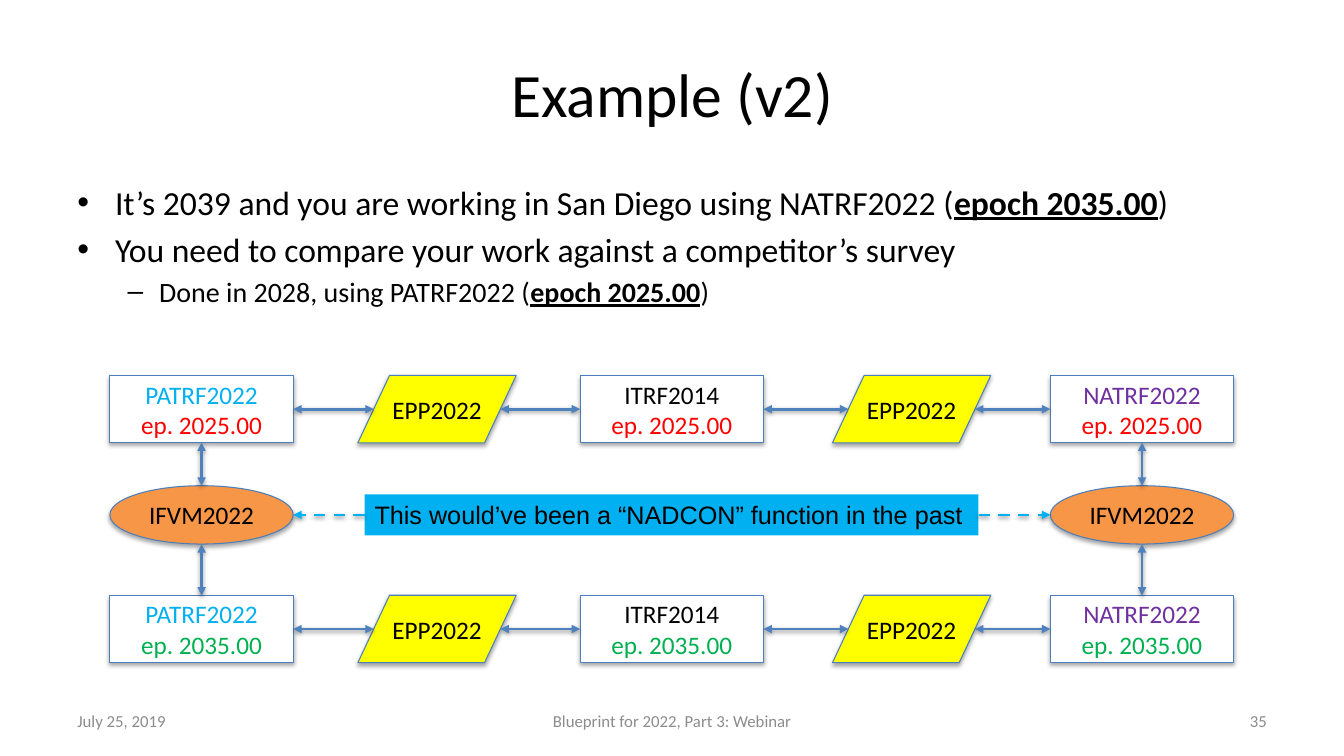
import pptx
import pptx.util
import pptx.dml.color
import pptx.enum.dml
import pptx.enum.shapes
import pptx.enum.text
import pptx.oxml.ns
from lxml import etree

Cm, Pt = pptx.util.Cm, pptx.util.Pt
KIND = pptx.enum.shapes.MSO_SHAPE
ALIGN = pptx.enum.text.PP_ALIGN
MID = pptx.enum.text.MSO_ANCHOR.MIDDLE
BLACK, SKY, STEEL = "000000", "00B0F0", "4F81BD"
FRAMES = [("PATRF2022", SKY), ("ITRF2014", BLACK), ("NATRF2022", "7030A0")]
EPOCHS = [("ep. 2025.00", "FF0000"), ("ep. 2035.00", "00B050")]


def color(code):
    return pptx.dml.color.RGBColor.from_string(code)


def node(root, tag, **attrs):
    return etree.SubElement(root, pptx.oxml.ns.qn("a:" + tag), attrs)


def write(para, text, size, code=BLACK, face="Calibri", strong=False):
    run = para.add_run()
    run.text = text
    font = run.font
    font.size, font.name = Pt(size), face
    font.color.rgb = color(code)
    if strong:
        font.bold = font.underline = True


def shade(effects, dist, alpha):
    """Put a soft shadow below a shape or line; dist in EMU."""
    cast = node(effects, "outerShdw", blurRad="40000", dist=str(dist),
                dir="5400000", rotWithShape="0")
    node(node(cast, "srgbClr", val=BLACK), "alpha", val=str(alpha * 1000))


def block(shapes, kind, box, fill, lines):
    """Add a filled, outlined shape with one centred paragraph per line."""
    shape = shapes.add_shape(kind, *map(Cm, box))
    shape.fill.solid()
    shape.fill.fore_color.rgb = color(fill)
    shape.line.color.rgb = color("4B7EBC")
    shape.line.width = Pt(0.75)
    shape.shadow.inherit = False
    shade(shape._element.spPr.find(pptx.oxml.ns.qn("a:effectLst")), 23000, 35)
    frame = shape.text_frame
    frame.vertical_anchor = MID
    for num, (text, code) in enumerate(lines):
        para = frame.add_paragraph() if num else frame.paragraphs[0]
        para.alignment = ALIGN.CENTER
        write(para, text, 18, code)
    return shape


def spot(shape, side):
    """Middle of a side: 0 top, 1 left, 2 bottom, 3 right."""
    slant = shape.auto_shape_type == KIND.FLOWCHART_DATA
    inset = shape.width // 10 if slant else 0
    x, y = shape.left + shape.width // 2, shape.top + shape.height // 2
    return [(x, shape.top), (shape.left + inset, y),
            (x, shape.top + shape.height),
            (shape.left + shape.width - inset, y)][side]


def link(shapes, start, out, stop, into, dashed=False):
    line = shapes.add_connector(pptx.enum.shapes.MSO_CONNECTOR.STRAIGHT,
                                *spot(start, out), *spot(stop, into))
    if start.auto_shape_type == KIND.RECTANGLE:
        line.begin_connect(start, out)
    if stop.auto_shape_type == KIND.RECTANGLE:
        line.end_connect(stop, into)
    line.line.color.rgb = color(SKY if dashed else STEEL)
    line.line.width = Pt(2)
    props = line._element.spPr
    stroke = line.line._get_or_add_ln()
    if dashed:
        line.line.dash_style = pptx.enum.dml.MSO_LINE.DASH
    else:
        node(stroke, "headEnd", type="triangle")
    node(stroke, "tailEnd", type="triangle")
    shade(node(props, "effectLst"), 20000, 38)


def head(slide, box):
    title = slide.shapes.title
    title.left, title.top, title.width, title.height = map(Cm, box)
    frame = title.text_frame
    frame.vertical_anchor = MID
    frame.paragraphs[0].alignment = ALIGN.CENTER
    write(frame.paragraphs[0], "Example (v2)", 44)


def body(shapes, box):
    frame = shapes.add_textbox(*map(Cm, box)).text_frame
    frame.word_wrap = True
    items = [
        (0, "It’s 2039 and you are working in San Diego using NATRF2022 (",
         "epoch 2035.00"),
        (0, "You need to compare your work against a competitor’s survey", ""),
        (1, "Done in 2028, using PATRF2022 (", "epoch 2025.00"),
    ]
    for num, (level, text, epoch) in enumerate(items):
        para = frame.add_paragraph() if num else frame.paragraphs[0]
        size = (24, 20)[level]
        props = para._p.get_or_add_pPr()
        props.set("marL", str(Cm((0.95, 2.06)[level])))
        props.set("indent", str(-Cm((0.95, 0.79)[level])))
        node(props, "buFont", typeface="Arial")
        node(props, "buChar", char="•–"[level])
        para.level = level
        if num:
            para.space_before = Pt(0.2 * size)
        write(para, text, size)
        if epoch:
            write(para, epoch, size, strong=True)
            write(para, ")", size)


def banner(shapes, box):
    shape = shapes.add_shape(KIND.RECTANGLE, *map(Cm, box))
    shape.fill.solid()
    shape.fill.fore_color.rgb = color(SKY)
    shape.line.fill.background()
    shape.shadow.inherit = False
    frame = shape.text_frame
    frame.word_wrap = False
    frame.vertical_anchor = MID
    frame.paragraphs[0].alignment = ALIGN.LEFT
    write(frame.paragraphs[0],
          "This would’ve been a “NADCON” function in the past", 18, face="Arial")
    return shape


def row(shapes, left, top, step, epoch):
    """Add three frames with two EPP steps between them; return the frames."""
    frames = [block(shapes, KIND.RECTANGLE,
                    (left + num * step, top, 4.62, 1.68), "FFFFFF", [name, epoch])
              for num, name in enumerate(FRAMES)]
    for num, shift in enumerate((6.25, 18.21)):
        plate = block(shapes, KIND.FLOWCHART_DATA,
                      (left + shift, top - 0.01, 3.99, 1.7), "FFFF00",
                      [("EPP2022", BLACK)])
        text = plate.text_frame
        text.margin_left = text.margin_right = 0
        text.margin_top = text.margin_bottom = 0
        link(shapes, frames[num], 3, plate, 1)
        link(shapes, plate, 3, frames[num + 1], 1)
    return frames


def graph(shapes, box):
    left, top, width, height = box
    step = (width - 4.62) / 2
    upper, lower = [row(shapes, left, y, step, epoch) for y, epoch in
                    zip((top, top + height - 1.68), EPOCHS)]
    note = banner(shapes, (left + 6.42, top + 2.99, 15.47, 1.03))
    for col, side in ((0, 1), (2, 3)):
        oval = block(shapes, KIND.OVAL,
                     (left + col * step, top + 2.77, 4.62, 1.47), "F79646",
                     [("IFVM2022", BLACK)])
        link(shapes, oval, 0, upper[col], 2)
        link(shapes, oval, 2, lower[col], 0)
        link(shapes, note, side, oval, 4 - side, dashed=True)


def foot(shapes, box):
    left, top, width, height = box
    parts = [("July 25, 2019", 0, 7.9, ALIGN.LEFT),
             ("Blueprint for 2022, Part 3: Webinar", 9.88, 10.72, ALIGN.CENTER),
             ("35", width - 7.9, 7.9, ALIGN.RIGHT)]
    for text, shift, wide, align in parts:
        frame = shapes.add_textbox(Cm(left + shift), Cm(top),
                                   Cm(wide), Cm(height)).text_frame
        frame.word_wrap = True
        frame.vertical_anchor = MID
        frame.paragraphs[0].alignment = align
        write(frame.paragraphs[0], text, 12, "8C8C8C")


def main():
    deck = pptx.Presentation()
    deck.slide_width, deck.slide_height = Cm(33.87), Cm(19.05)
    slide = deck.slides.add_slide(deck.slide_layouts[5])
    head(slide, (1.7, 0.76, 30.48, 3.18))
    body(slide.shapes, (1.7, 4.45, 30.48, 4.4))
    foot(slide.shapes, (1.7, 17.65, 30.48, 1.02))
    graph(slide.shapes, (2.77, 9.47, 28.32, 7.22))
    deck.save("out.pptx")


if __name__ == "__main__":
    main()
